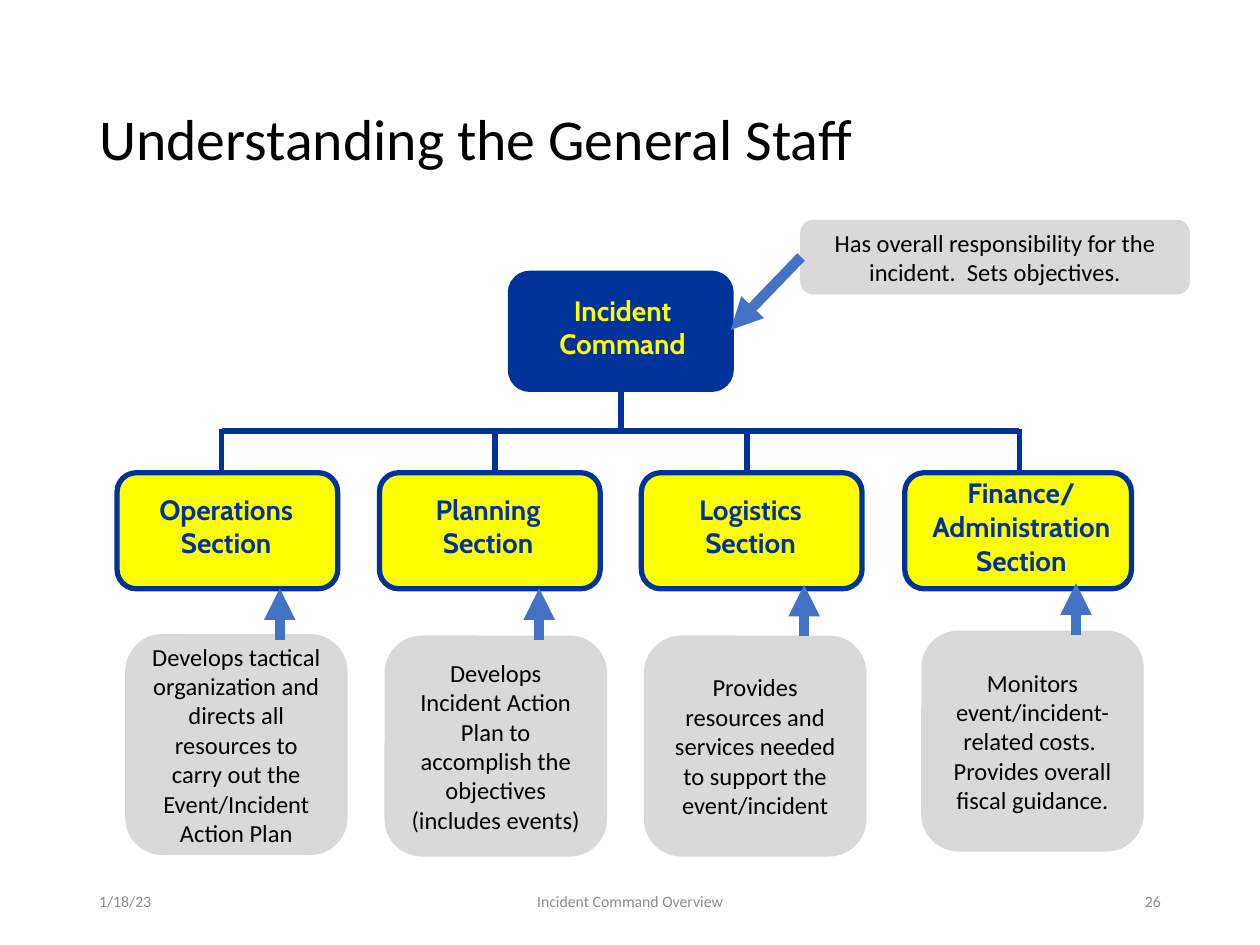
from lxml.etree import SubElement
from pptx import Presentation
from pptx.dml.color import RGBColor
from pptx.enum.shapes import MSO_CONNECTOR as Link, MSO_SHAPE as Shape
from pptx.enum.text import MSO_ANCHOR as Anchor, PP_ALIGN as Align
from pptx.oxml.ns import qn
from pptx.util import Cm, Pt

NAVY, YELLOW, GREY = "003399", "FFFF00", "D9D9D9"
BLACK, MUTED, BLUE = "000000", "8C8C8C", "4472C4"

# Section name, box left and width, label (left, top, width, height), branch x
SECTIONS = [
    ("Operations Section", 2.36, 4.45, (2.72, 9.8, 3.68, 1.63), 4.47),
    ("Planning Section", 7.65, 4.45, (8.15, 9.8, 3.38, 1.63), 9.98),
    ("Logistics Section", 12.93, 4.45, (13.44, 9.8, 3.38, 1.63), 15.06),
    ("Finance/ Administration Section", 18.24, 4.57,
     (18.14, 9.47, 4.9, 2.29), 20.55),
]
# Duty, callout left and top, arrow x and tip
DUTIES = [
    ("Develops tactical organization and directs all resources to carry out "
     "the Event/Incident Action Plan", 2.54, 12.8, 5.64, 11.86),
    ("Develops Incident Action Plan to accomplish the objectives "
     "(includes events)", 7.77, 12.83, 10.87, 11.86),
    ("Provides resources and services needed to support the event/incident",
     13, 12.83, 16.21, 11.79),
    ("Monitors event/incident-related costs.  Provides overall fiscal "
     "guidance.", 18.59, 12.73, 21.69, 11.76),
]
FOOTERS = [
    ("1/18/23", 1.75, 5.72, Align.LEFT),
    ("Incident Command Overview", 8.41, 8.58, Align.CENTER),
    ("26", 17.93, 5.72, Align.RIGHT),
]
BAR_Y, BRANCH_END = 8.69, 9.7
ARROW_LENGTH = 1.04


def color(value):
    return RGBColor.from_string(value)


class StaffChart:
    """Draws the staff chart on one slide; all lengths are in centimetres."""

    body_font, label_font = "Calibri", "Cabin"

    def __init__(self, slide):
        self.shapes = slide.shapes

    def set_text(self, shape, text, size, ink, align=Align.CENTER,
                 anchor=Anchor.MIDDLE, font=None, bold=False):
        frame = shape.text_frame
        frame.word_wrap = True
        frame.vertical_anchor = anchor
        frame.text = text
        para = frame.paragraphs[0]
        para.alignment = align
        style = para.runs[0].font
        style.name = font or self.body_font
        style.size, style.bold = Pt(size), bold
        style.color.rgb = color(ink)
        return para

    def text(self, area, *args, **style):
        box = self.shapes.add_textbox(*map(Cm, area))
        return self.set_text(box, *args, **style)

    def label(self, area, text, ink):
        self.text(area, text, 16, ink, anchor=Anchor.TOP,
                  font=self.label_font, bold=True)

    def box(self, area, fill, outline, width):
        shape = self.shapes.add_shape(Shape.ROUNDED_RECTANGLE, *map(Cm, area))
        shape.shadow.inherit = False
        shape.fill.solid()
        shape.fill.fore_color.rgb = color(fill)
        shape.line.color.rgb = color(outline)
        shape.line.width = Pt(width)
        return shape

    def callout(self, area, text):
        self.set_text(self.box(area, GREY, GREY, 1), text, 14, BLACK)

    def line(self, start, end, ink=NAVY, width=3):
        link = self.shapes.add_connector(Link.STRAIGHT, *map(Cm, start + end))
        link.line.color.rgb = color(ink)
        link.line.width = Pt(width)
        SubElement(link._element.spPr, qn("a:effectLst"))
        return link

    def arrow(self, start, end):
        link = self.line(start, end, BLUE, 6)
        outline = link._element.spPr.find(qn("a:ln"))
        SubElement(outline, qn("a:tailEnd"), type="triangle")


def main():
    deck = Presentation()
    deck.slide_width, deck.slide_height = Cm(25.4), Cm(19.05)
    chart = StaffChart(deck.slides.add_slide(deck.slide_layouts[6]))

    title = chart.text((1.75, 1.02, 21.9, 3.68),
                       "Understanding the General Staff", 33, BLACK,
                       align=Align.LEFT)
    title.line_spacing = 0.9
    for text, left, width, align in FOOTERS:
        chart.text((left, 17.65, width, 1.02), text, 9, MUTED, align=align)

    chart.line((12.52, 7.62), (12.52, BAR_Y))
    chart.line((SECTIONS[0][-1], BAR_Y), (SECTIONS[-1][-1], BAR_Y))
    for name, left, width, label_area, branch in SECTIONS:
        chart.line((branch, BAR_Y - 0.05), (branch, BRANCH_END))
        chart.box((left, 9.53, width, 2.34), YELLOW, NAVY, 3)
        chart.label(label_area, name, NAVY)

    chart.box((10.29, 5.51, 4.45, 2.34), NAVY, NAVY, 3)
    chart.label((10.67, 5.79, 3.76, 1.65), "Incident Command", YELLOW)
    chart.callout((16.15, 4.45, 7.82, 1.47),
                  "Has overall responsibility for the incident.  "
                  "Sets objectives.")
    chart.arrow((16.15, 5.18), (14.73, 6.65))

    for duty, left, top, arrow_x, tip in DUTIES:
        chart.callout((left, top, 4.45, 4.42), duty)
        chart.arrow((arrow_x, tip + ARROW_LENGTH), (arrow_x, tip))

    deck.save("out.pptx")


if __name__ == "__main__":
    main()
